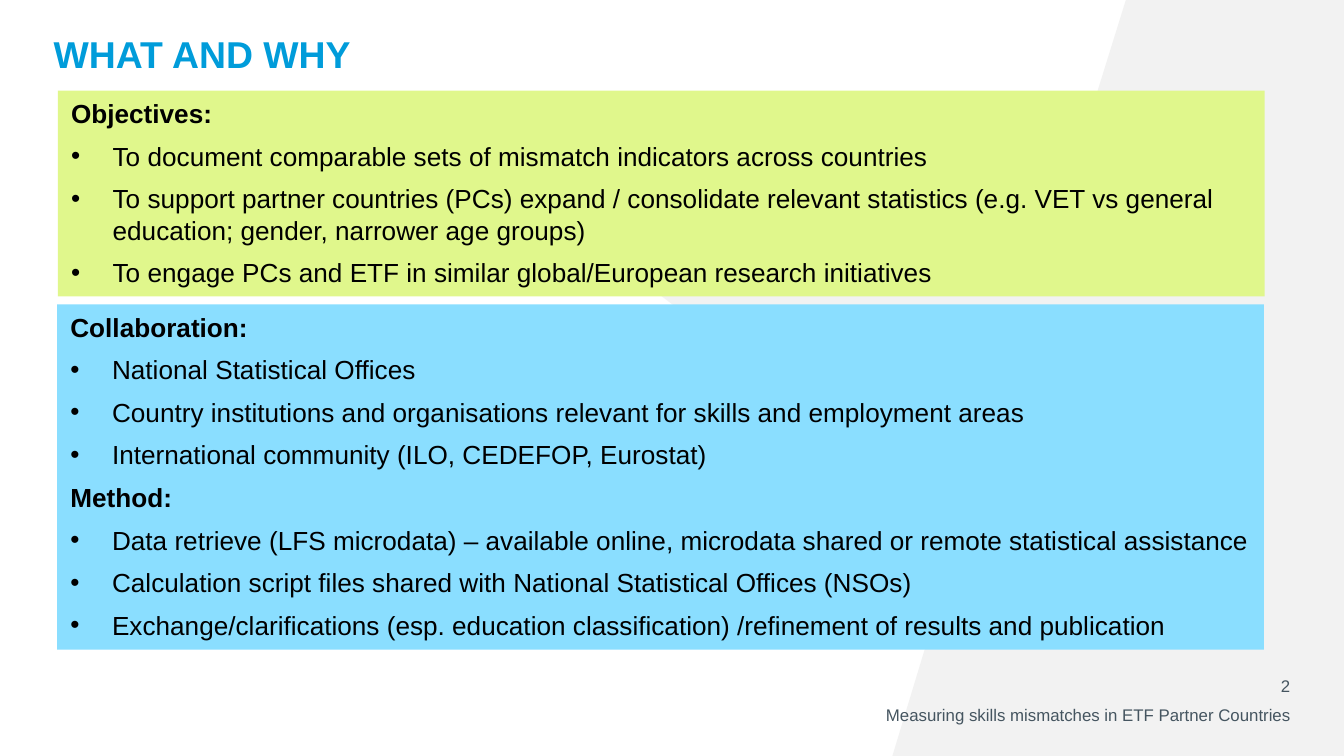
from dataclasses import dataclass

from lxml import etree
from pptx import Presentation
from pptx import util as u
from pptx.dml.color import RGBColor
from pptx.enum import shapes, text
from pptx.oxml import ns

PX = 4572  # EMU per px, 200 px to the inch
COLORS = {
    "backdrop": "F2F2F2",
    "title": "009CDA",
    "footer": "455560",
    "body": "000000",
    "green": "E0F78C",
    "blue": "8ADEFF",
}
BACKDROP = [(1676, -2), (2000, -2), (2000, 1125), (1328, 1125),
            (1432, 782), (716, 236), (1602, 236)]
INDENT = 62


@dataclass
class Label:
    words: str
    box: tuple[int, int, int, int]
    size: int
    color: str
    anchor: text.MSO_ANCHOR
    align: text.PP_ALIGN
    bold: bool = False
    bottom: int = 0
    spacing: float = 0.9


@dataclass
class Section:
    heading: str
    points: list[str]


@dataclass
class Panel:
    box: tuple[int, int, int, int]
    color: str
    sections: list[Section]


LABELS = [
    Label("WHAT AND WHY", (80, 36, 1840, 110), 20, "title",
          text.MSO_ANCHOR.BOTTOM, text.PP_ALIGN.LEFT, bold=True, bottom=32),
    Label("Measuring skills mismatches in ETF Partner Countries",
          (386, 1052, 1534, 28), 9, "footer",
          text.MSO_ANCHOR.MIDDLE, text.PP_ALIGN.RIGHT),
    Label("2", (1882, 1007, 38, 28), 9, "footer",
          text.MSO_ANCHOR.MIDDLE, text.PP_ALIGN.RIGHT, spacing=1.0),
]

PANELS = [
    Panel((86, 135, 1796, 306), "green", [
        Section("Objectives:", [
            "To document comparable sets of mismatch indicators across countries",
            "To support partner countries (PCs) expand / consolidate relevant statistics "
            "(e.g. VET vs general education; gender, narrower age groups)",
            "To engage PCs and ETF in similar global/European research initiatives",
        ]),
    ]),
    Panel((85, 453, 1796, 514), "blue", [
        Section("Collaboration:", [
            "National Statistical Offices",
            "Country institutions and organisations relevant for skills and employment areas",
            "International community (ILO, CEDEFOP, Eurostat)",
        ]),
        Section("Method:", [
            "Data retrieve (LFS microdata) – available online, microdata shared "
            "or remote statistical assistance",
            "Calculation script files shared with National Statistical Offices (NSOs)",
            "Exchange/clarifications (esp. education classification) "
            "/refinement of results and publication",
        ]),
    ]),
]


def px(*lengths: int) -> list[int]:
    return [length * PX for length in lengths]


def apply(target, values: dict) -> None:
    for name, value in values.items():
        setattr(target, name, value)


def paint(shape, color: str) -> None:
    shape.shadow.inherit = False
    shape.fill.solid()
    shape.fill.fore_color.rgb = RGBColor.from_string(COLORS[color])
    shape.line.fill.background()


def write(paragraph, words: str, size: int, color: str, bold: bool) -> None:
    run = paragraph.add_run()
    run.text = words
    apply(run.font, {"name": "Arial", "size": u.Pt(size), "bold": bold})
    run.font.color.rgb = RGBColor.from_string(COLORS[color])


def add_bullet(paragraph) -> None:
    properties = paragraph._p.get_or_add_pPr()
    properties.set("marL", str(INDENT * PX))
    properties.set("indent", str(-INDENT * PX))
    etree.SubElement(properties, ns.qn("a:buFont")).set("typeface", "Arial")
    etree.SubElement(properties, ns.qn("a:buChar")).set("char", "•")


def draw_backdrop(slide) -> None:
    builder = slide.shapes.build_freeform(*BACKDROP[0], scale=PX)
    builder.add_line_segments(BACKDROP[1:], close=True)
    paint(builder.convert_to_shape(), "backdrop")


def draw_label(slide, label: Label) -> None:
    frame = slide.shapes.add_textbox(*px(*label.box)).text_frame
    apply(frame, {
        "word_wrap": True, "vertical_anchor": label.anchor,
        "margin_left": 0, "margin_right": 0, "margin_top": 0,
        "margin_bottom": label.bottom * PX,
    })
    paragraph = frame.paragraphs[0]
    apply(paragraph, {"alignment": label.align, "line_spacing": label.spacing})
    write(paragraph, label.words, label.size, label.color, label.bold)


def draw_panel(slide, panel: Panel) -> None:
    rectangle = slide.shapes.add_shape(shapes.MSO_SHAPE.RECTANGLE, *px(*panel.box))
    paint(rectangle, panel.color)
    frame = rectangle.text_frame
    apply(frame, {"word_wrap": True, "vertical_anchor": text.MSO_ANCHOR.TOP,
                  "auto_size": text.MSO_AUTO_SIZE.SHAPE_TO_FIT_TEXT})
    lines = [(words, is_heading)
             for section in panel.sections
             for words, is_heading in [(section.heading, True),
                                       *((point, False) for point in section.points)]]
    for index, (words, is_heading) in enumerate(lines):
        paragraph = frame.add_paragraph() if index else frame.paragraphs[0]
        if not is_heading:
            add_bullet(paragraph)
        paragraph.alignment = text.PP_ALIGN.LEFT
        if index:
            paragraph.space_before = u.Pt(6)
        write(paragraph, words, 14, "body", is_heading)


def main() -> None:
    deck = Presentation()
    deck.slide_width, deck.slide_height = px(2000, 1125)
    slide = deck.slides.add_slide(deck.slide_layouts[6])
    draw_backdrop(slide)
    for label in LABELS:
        draw_label(slide, label)
    for panel in PANELS:
        draw_panel(slide, panel)
    deck.save("out.pptx")


if __name__ == "__main__":
    main()
